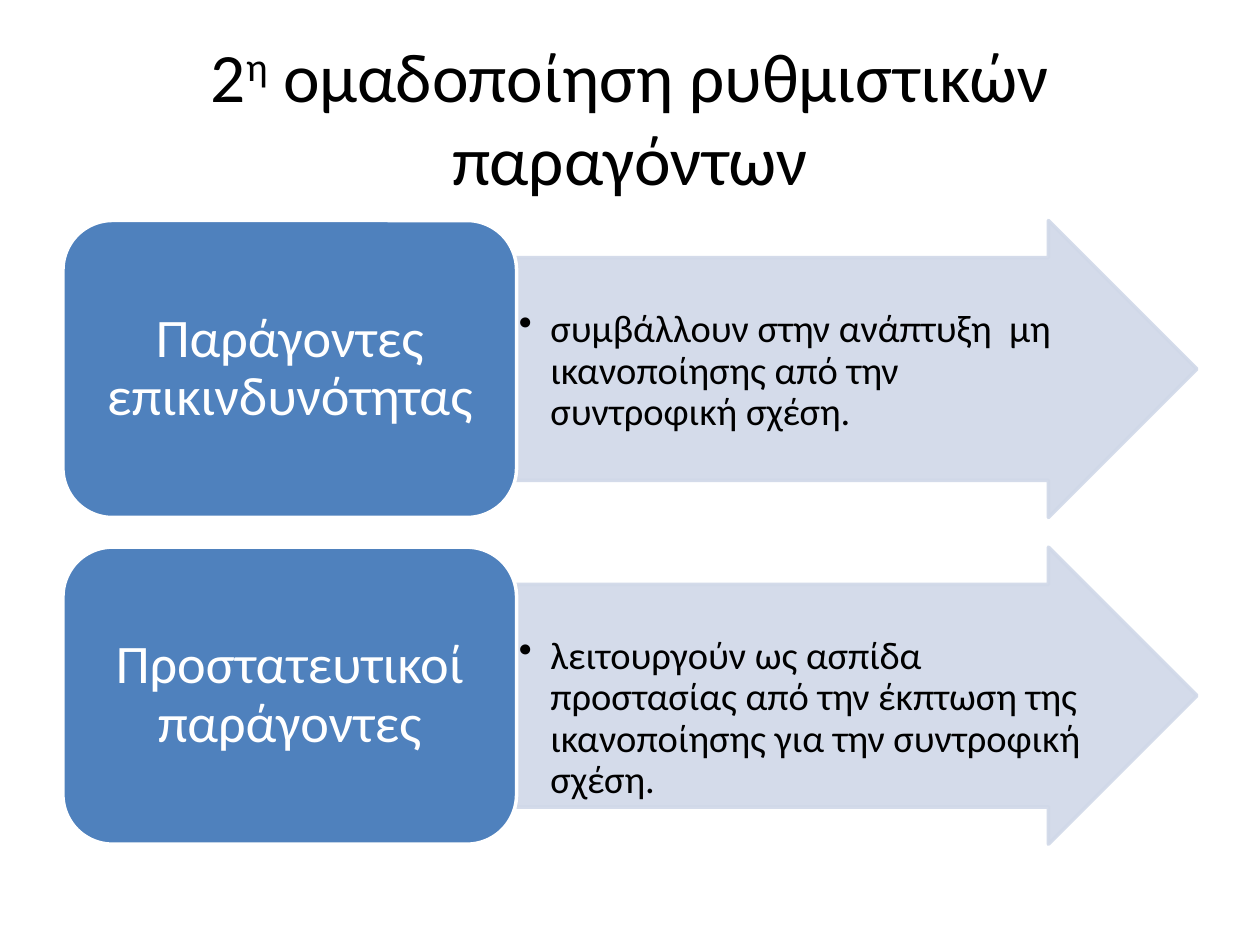
from typing import NamedTuple

from lxml.etree import SubElement
from pptx import Presentation
from pptx.dml.color import RGBColor
from pptx.enum.shapes import MSO_SHAPE as Geo
from pptx.enum.text import MSO_ANCHOR as Anchor, MSO_AUTO_SIZE as Fit, PP_ALIGN as Align
from pptx.oxml.ns import qn
from pptx.util import Pt

BLACK = RGBColor(0x00, 0x00, 0x00)
WHITE = RGBColor(0xFF, 0xFF, 0xFF)
BLUE = RGBColor(0x4F, 0x81, 0xBD)
PALE = RGBColor(0xD0, 0xD8, 0xE8)
FONT = "Calibri"

LEFT, TOP = 36, 126
BOX_W, ARROW_W, ROW_H = 259.2, 388.8, 169.7
STEP = ROW_H * 1.1


class Factor(NamedTuple):
    name: str
    role: str


FACTORS = [
    Factor("Παράγοντες επικινδυνότητας",
           "συμβάλλουν στην ανάπτυξη  μη ικανοποίησης από την συντροφική σχέση."),
    Factor("Προστατευτικοί παράγοντες",
           "λειτουργούν ως ασπίδα προστασίας από την έκπτωση της ικανοποίησης "
           "για την συντροφική σχέση."),
]


def add_run(para, text: str, size: float, color: RGBColor):
    run = para.add_run()
    run.text = text
    run.font.name = FONT
    run.font.size = Pt(size)
    run.font.color.rgb = color
    return run


def add_block(slide, geo, left: float, top: float, width: float,
              fill: RGBColor, line: RGBColor):
    shape = slide.shapes.add_shape(geo, Pt(left), Pt(top), Pt(width), Pt(ROW_H))
    shape.shadow.inherit = False
    shape.fill.solid()
    shape.fill.fore_color.rgb = fill
    shape.line.color.rgb = line
    shape.line.width = Pt(2)
    return shape


def set_frame(shape, anchor, side: float, top: float, base: float):
    """Set anchor and insets; return the first paragraph."""
    frame = shape.text_frame
    frame.word_wrap = True
    frame.vertical_anchor = anchor
    frame.margin_left = frame.margin_right = Pt(side)
    frame.margin_top, frame.margin_bottom = Pt(top), Pt(base)
    para = frame.paragraphs[0]
    para.line_spacing = 0.9
    return para


def fade(shape, percent: int) -> None:
    """Set the opacity of fill and line."""
    for color in shape._element.spPr.iter(qn("a:srgbClr")):
        SubElement(color, qn("a:alpha"), val=str(percent * 1000))


def add_bullet(para, indent: float) -> None:
    props = para._p.get_or_add_pPr()
    props.set("marL", str(Pt(indent)))
    props.set("indent", str(-Pt(indent)))
    SubElement(props, qn("a:buChar"), char="•")


def add_factor(slide, factor: Factor, top: float) -> None:
    arrow = add_block(slide, Geo.RIGHT_ARROW, LEFT + BOX_W, top, ARROW_W, PALE, PALE)
    arrow.adjustments[0] = 0.75
    arrow.adjustments[1] = 0.5
    fade(arrow, 90)
    para = set_frame(arrow, Anchor.TOP, 1.4, 29.5, 1.4)
    para.alignment = Align.LEFT
    add_bullet(para, 18)
    add_run(para, factor.role, 22, BLACK)

    box = add_block(slide, Geo.ROUNDED_RECTANGLE, LEFT, top, BOX_W, BLUE, WHITE)
    para = set_frame(box, Anchor.MIDDLE, 9.3, 4.6, 4.6)
    para.alignment = Align.CENTER
    add_run(para, factor.name, 31, WHITE)


def add_title(slide) -> None:
    title = slide.shapes.title
    title.left, title.top = Pt(LEFT), Pt(21.6)
    title.width, title.height = Pt(648), Pt(90)
    frame = title.text_frame
    frame.auto_size = Fit.NONE
    frame.word_wrap = True
    frame.vertical_anchor = Anchor.MIDDLE
    para = frame.paragraphs[0]
    para.alignment = Align.CENTER
    add_run(para, "2", 39.6, BLACK)
    raised = add_run(para, "η", 39.6, BLACK)
    raised._r.get_or_add_rPr().set("baseline", "30000")
    add_run(para, " ομαδοποίηση ρυθμιστικών παραγόντων", 39.6, BLACK)


def main() -> None:
    deck = Presentation()
    deck.slide_width, deck.slide_height = Pt(720), Pt(540)
    slide = deck.slides.add_slide(deck.slide_layouts[5])
    add_title(slide)
    for row, factor in enumerate(FACTORS):
        add_factor(slide, factor, TOP + row * STEP)
    deck.save("out.pptx")


if __name__ == "__main__":
    main()
